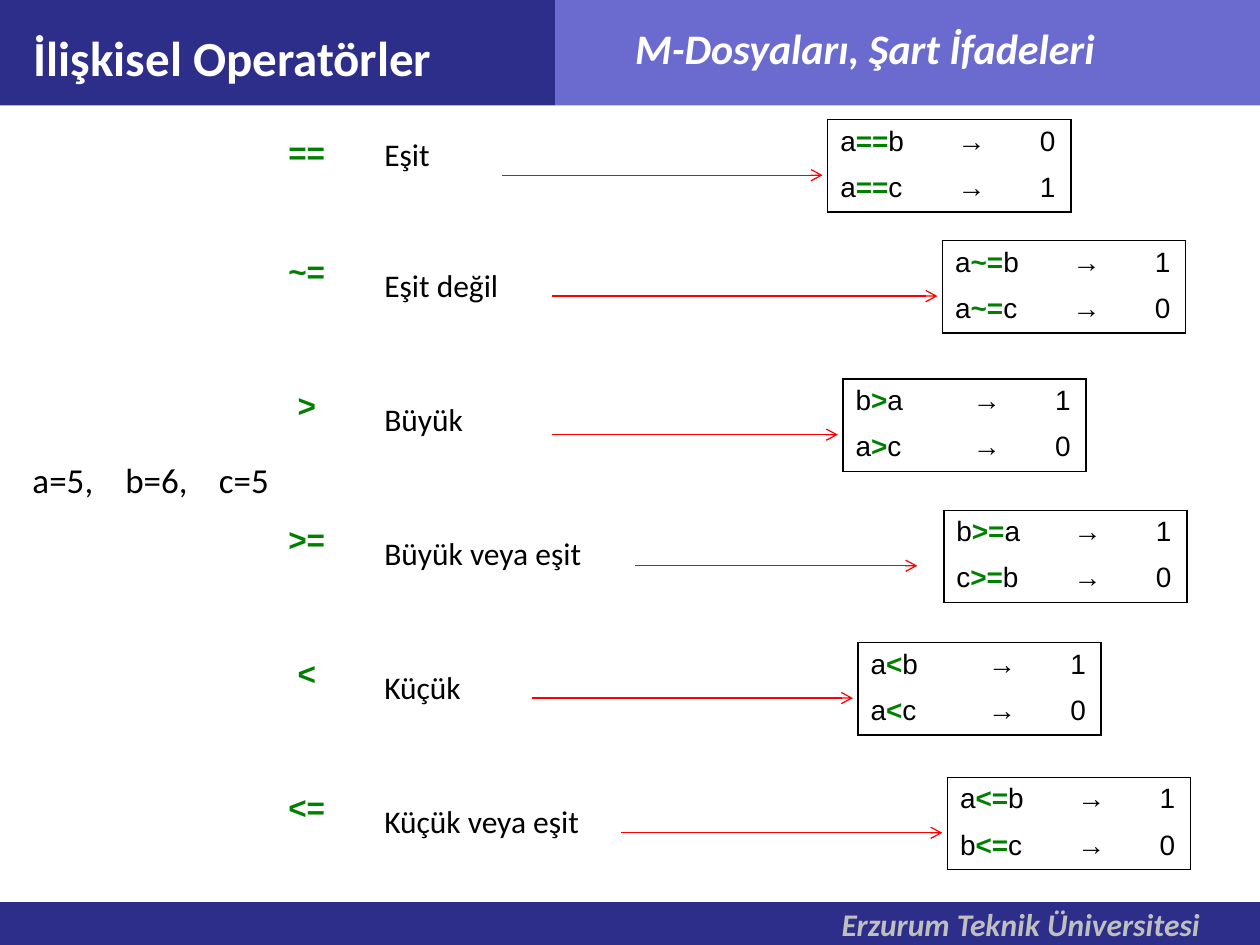
from dataclasses import dataclass

from lxml import etree
from pptx import Presentation
from pptx.dml.color import RGBColor
from pptx.enum import shapes, text
from pptx.oxml import ns
from pptx.util import Pt

NAVY = RGBColor(0x2D, 0x2D, 0x8A)
LAVENDER = RGBColor(0x6B, 0x6B, 0xCF)
WHITE = RGBColor(0xFF, 0xFF, 0xFF)
SILVER = RGBColor(0xBF, 0xBF, 0xBF)
BLACK = RGBColor(0, 0, 0)
GREEN = RGBColor(0, 0x80, 0)
RED = RGBColor(0xFF, 0, 0)

PLAIN_TABLE = "{2D5ABB26-0587-4C30-8999-92F81FD0307C}"
ARROW_DROP = 31.7
ARROW_GAP = 2.9


@dataclass
class Operator:
    symbol: str
    meaning: str
    examples: tuple
    left: float
    top: float
    arrow_start: float
    arrow_gap: float = ARROW_GAP


OPERATORS = [
    Operator("==", "Eşit", (("a", "b", 0), ("a", "c", 1)), 473, 68.4, 286.6),
    Operator("~=", "Eşit değil", (("a", "b", 1), ("a", "c", 0)), 538.6, 137.5, 315.4),
    Operator(">", "Büyük", (("b", "a", 1), ("a", "c", 0)), 481.7, 216.7, 315.4),
    Operator(">=", "Büyük veya eşit", (("b", "a", 1), ("c", "b", 0)), 539.3, 291.6, 362.9, 15.1),
    Operator("<", "Küçük", (("a", "b", 1), ("a", "c", 0)), 490.3, 367.2, 303.8),
    Operator("<=", "Küçük veya eşit", (("a", "b", 1), ("b", "c", 0)), 541.4, 444.2, 355),
]


def add_xml(parent, tag, **attributes):
    return etree.SubElement(parent, ns.qn(tag), attributes)


def style(paragraph, size, color, name="Calibri", bold=False, italic=False, align=text.PP_ALIGN.LEFT):
    paragraph.alignment = align
    font = paragraph.font
    font.size, font.name, font.bold, font.italic = Pt(size), name, bold, italic
    font.color.rgb = color


def set_tabs(paragraph, *stops):
    tab_list = etree.Element(ns.qn("a:tabLst"))
    for stop in stops:
        add_xml(tab_list, "a:tab", pos=str(Pt(stop)), algn="l")
    properties = paragraph._p.get_or_add_pPr()
    defaults = properties.find(ns.qn("a:defRPr"))
    if defaults is None:
        properties.append(tab_list)
    else:
        defaults.addprevious(tab_list)


def add_band(slide, left, top, width, height, color):
    band = slide.shapes.add_shape(
        shapes.MSO_SHAPE.RECTANGLE, Pt(left), Pt(top), Pt(width), Pt(height))
    band.shadow.inherit = False
    band.fill.solid()
    band.fill.fore_color.rgb = color
    band.line.fill.background()


def add_label(slide, words, left, top, width, height, size, color, **look):
    frame = slide.shapes.add_textbox(Pt(left), Pt(top), Pt(width), Pt(height)).text_frame
    frame.word_wrap = True
    paragraph = frame.paragraphs[0]
    paragraph.add_run().text = words
    style(paragraph, size, color, **look)
    return paragraph


def set_title(slide, words):
    title = slide.shapes.title
    title.left, title.top, title.width, title.height = Pt(12.2), Pt(12.2), Pt(339), Pt(37.5)
    frame = title.text_frame
    frame.text = words
    frame.vertical_anchor = text.MSO_ANCHOR.MIDDLE
    frame.margin_bottom = 0
    style(frame.paragraphs[0], 28, WHITE, bold=True)
    title._element.getparent().append(title._element)


def add_plain_table(slide, left, top, widths, heights):
    table = slide.shapes.add_table(
        len(heights), len(widths), Pt(left), Pt(top), Pt(sum(widths)), Pt(sum(heights))).table
    table.first_row = table.horz_banding = False
    table._tbl.tblPr.find(ns.qn("a:tableStyleId")).text = PLAIN_TABLE
    for column, width in zip(table.columns, widths):
        column.width = Pt(width)
    for row, height in zip(table.rows, heights):
        row.height = Pt(height)
    for cell in table.iter_cells():
        cell.fill.background()
    return table


def add_operator_table(slide):
    heights = [31] + [76.6] * (len(OPERATORS) - 1)
    table = add_plain_table(slide, 138.2, 74.2, [74.2, 182.2], heights)
    for row, operator in enumerate(OPERATORS):
        symbol, meaning = table.cell(row, 0), table.cell(row, 1)
        symbol.text, meaning.text = operator.symbol, operator.meaning
        if row:
            symbol.margin_top, meaning.margin_top = Pt(40.4), Pt(47.5)
        style(symbol.text_frame.paragraphs[0], 18, GREEN, "Arial", True,
              align=text.PP_ALIGN.CENTER)
        style(meaning.text_frame.paragraphs[0], 18, BLACK)


def border(cell, sides):
    properties = cell._tc.get_or_add_tcPr()
    for position, side in enumerate(sides):
        line = etree.Element(ns.qn(f"a:ln{side}"), w=str(Pt(1)))
        add_xml(add_xml(line, "a:solidFill"), "a:srgbClr", val=str(BLACK))
        properties.insert(position, line)


def add_examples(slide, operator):
    table = add_plain_table(slide, operator.left, operator.top, [65.5, 73.5], [26.4, 26.4])
    for row, (first, second, value) in enumerate(operator.examples):
        expression, result = table.cell(row, 0), table.cell(row, 1)
        paragraph = expression.text_frame.paragraphs[0]
        style(paragraph, 16, BLACK, "Arial")
        for part in (first, operator.symbol, second):
            run = paragraph.add_run()
            run.text = part
            if part == operator.symbol:
                run.font.bold = True
                run.font.color.rgb = GREEN
        result.text = f"→\t{value}"
        result.margin_left = Pt(8.8)
        style(result.text_frame.paragraphs[0], 16, BLACK, "Arial")
        set_tabs(result.text_frame.paragraphs[0], 47)
        edge = "B" if row else "T"
        border(expression, "L" + edge)
        border(result, "R" + edge)


def add_arrow(slide, operator):
    y = Pt(operator.top + ARROW_DROP)
    arrow = slide.shapes.add_connector(
        shapes.MSO_CONNECTOR.STRAIGHT, Pt(operator.arrow_start), y,
        Pt(operator.left - operator.arrow_gap), y)
    arrow.line.color.rgb = RED
    arrow.line.width = Pt(0.75)
    add_xml(arrow.line._get_or_add_ln(), "a:tailEnd", type="arrow")
    add_xml(arrow._element.spPr, "a:effectLst")


def main():
    deck = Presentation()
    deck.slide_width, deck.slide_height = Pt(720), Pt(540)
    slide = deck.slides.add_slide(deck.slide_layouts[5])
    add_band(slide, 0, 515.5, 720, 24.5, NAVY)
    add_band(slide, 0, 0, 317.5, 60.3, NAVY)
    add_band(slide, 317.5, 0, 402.5, 60.3, LAVENDER)
    add_label(slide, "M-Dosyaları, Şart İfadeleri", 269.3, 9.4, 450, 36, 24, WHITE,
              bold=True, italic=True, align=text.PP_ALIGN.CENTER)
    add_label(slide, "Erzurum Teknik Üniversitesi", 473.8, 513.4, 246, 29, 18, SILVER,
              bold=True, italic=True)
    set_title(slide, "İlişkisel Operatörler")
    add_operator_table(slide)
    for operator in OPERATORS:
        add_examples(slide, operator)
        add_arrow(slide, operator)
    values = add_label(slide, "a=5,\tb=6,\tc=5", 11.5, 258.5, 151.2, 31.5, 20, BLACK)
    set_tabs(values, 53, 106.5)
    deck.save("out.pptx")


if __name__ == "__main__":
    main()
